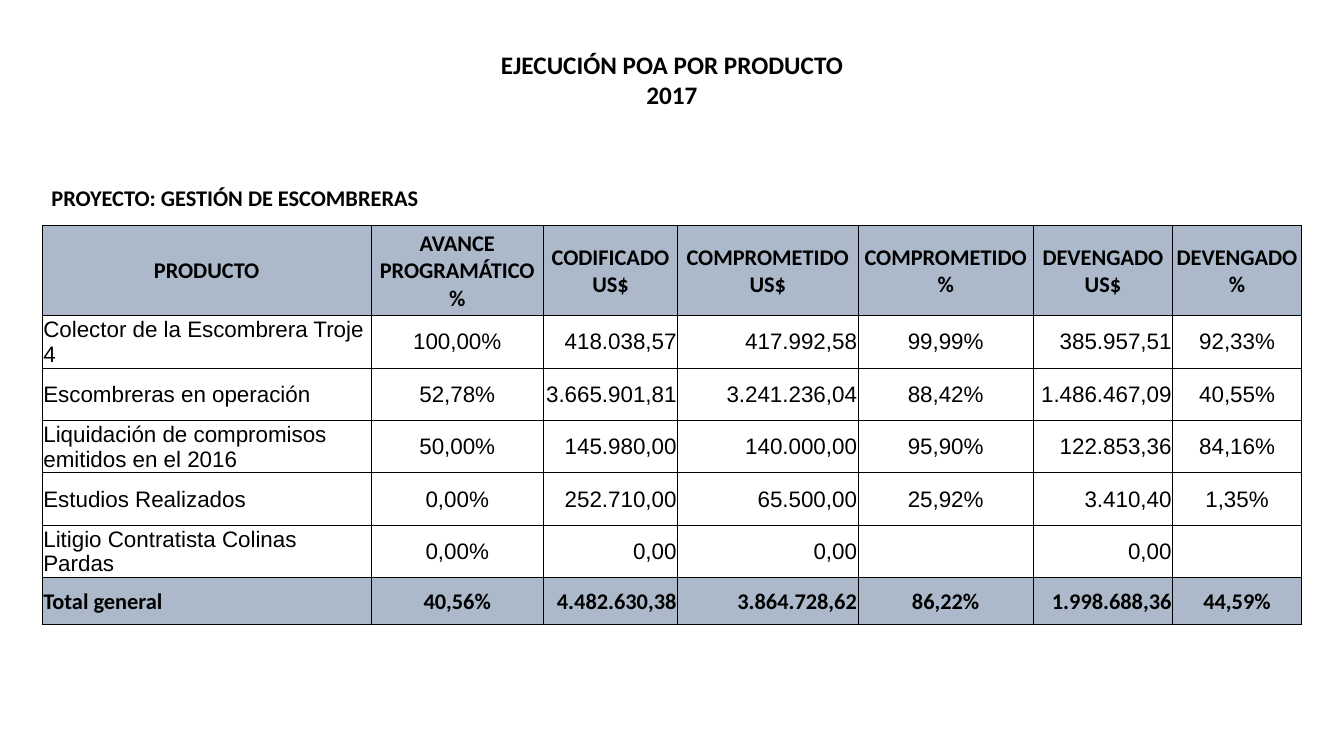
"""Build the 2017 budget execution slide for the rubble dump project."""
from typing import NamedTuple

from lxml.etree import SubElement
from pptx import Presentation
from pptx.dml.color import RGBColor
from pptx.enum.text import MSO_ANCHOR, PP_ALIGN
from pptx.oxml.ns import qn
from pptx.util import Inches, Pt

BLACK, BLUE = "000000", "ACB9CA"
LEFT, CENTER, RIGHT = PP_ALIGN.LEFT, PP_ALIGN.CENTER, PP_ALIGN.RIGHT


class Column(NamedTuple):
    head: str
    width: float
    align: PP_ALIGN


class Row(NamedTuple):
    texts: tuple[str, ...]
    height: float
    strong: bool = False


class Style(NamedTuple):
    font: str = "Calibri"
    size: int = 16
    bold: bool = True


COLUMNS = (
    Column("PRODUCTO", 3.26, LEFT),
    Column("AVANCE PROGRAMÁTICO %", 1.71, CENTER),
    Column("CODIFICADO US$", 1.33, RIGHT),
    Column("COMPROMETIDO US$", 1.79, RIGHT),
    Column("COMPROMETIDO %", 1.74, CENTER),
    Column("DEVENGADO US$", 1.38, RIGHT),
    Column("DEVENGADO %", 1.28, CENTER),
)
PRODUCTS = (
    ("Colector de la Escombrera Troje 4", "100,00%", "418.038,57", "417.992,58",
     "99,99%", "385.957,51", "92,33%"),
    ("Escombreras en operación", "52,78%", "3.665.901,81", "3.241.236,04",
     "88,42%", "1.486.467,09", "40,55%"),
    ("Liquidación de compromisos emitidos en el 2016", "50,00%", "145.980,00",
     "140.000,00", "95,90%", "122.853,36", "84,16%"),
    ("Estudios Realizados", "0,00%", "252.710,00", "65.500,00",
     "25,92%", "3.410,40", "1,35%"),
    ("Litigio Contratista Colinas Pardas", "0,00%", "0,00", "0,00", "", "0,00", ""),
)
TOTAL = ("Total general", "40,56%", "4.482.630,38", "3.864.728,62",
         "86,22%", "1.998.688,36", "44,59%")
ROWS = (
    Row(tuple(col.head for col in COLUMNS), 0.89, True),
    *(Row(texts, 0.52) for texts in PRODUCTS),
    Row(TOTAL, 0.47, True),
)


def color(code: str) -> RGBColor:
    """Turn a hex string into a colour."""
    return RGBColor.from_string(code)


def apply(target, values: dict) -> None:
    """Set each named attribute on the target."""
    for name, value in values.items():
        setattr(target, name, value)


def write(frame, lines: tuple[str, ...], align: PP_ALIGN, style: Style) -> None:
    """Fill a text frame with one paragraph per line."""
    for i, line in enumerate(lines):
        para = frame.add_paragraph() if i else frame.paragraphs[0]
        para.alignment = align
        run = para.add_run()
        run.text = line
        apply(run.font, {"name": style.font, "size": Pt(style.size), "bold": style.bold})
        run.font.color.rgb = color(BLACK)


def place(shape, left: float, top: float, width: float, height: float) -> None:
    """Position a text shape and set its frame."""
    apply(shape, {"left": Inches(left), "top": Inches(top),
                  "width": Inches(width), "height": Inches(height)})
    apply(shape.text_frame, {
        "word_wrap": True, "vertical_anchor": MSO_ANCHOR.MIDDLE,
        "margin_left": Inches(0.09), "margin_right": Inches(0.09),
        "margin_top": Inches(0.04), "margin_bottom": Inches(0.04)})


def border(cell, widths: dict[str, float]) -> None:
    """Draw the sides of a cell with the given point widths."""
    props = cell._tc.get_or_add_tcPr()
    for side, width in widths.items():
        line = SubElement(props, qn(f"a:ln{side}"), w=str(Pt(width)))
        fill = SubElement(line, qn("a:solidFill"))
        SubElement(fill, qn("a:srgbClr"), val=BLACK)


def draw_cell(cell, text: str, align: PP_ALIGN, strong: bool, widths: dict[str, float]) -> None:
    """Format one table cell and write its text."""
    apply(cell, {"vertical_anchor": MSO_ANCHOR.MIDDLE, "margin_left": Inches(0.01),
                 "margin_right": Inches(0.01), "margin_top": Inches(0.01),
                 "margin_bottom": 0})
    border(cell, widths)
    if strong:
        cell.fill.solid()
        cell.fill.fore_color.rgb = color(BLUE)
    else:
        cell.fill.background()
    if text:
        style = Style() if strong else Style("Arial", bold=False)
        write(cell.text_frame, (text,), align, style)


def draw_table(slide) -> None:
    """Add the product table with thicker outer borders."""
    width = sum(col.width for col in COLUMNS)
    height = sum(row.height for row in ROWS)
    table = slide.shapes.add_table(len(ROWS), len(COLUMNS), Inches(0.42), Inches(2.24),
                                   Inches(width), Inches(height)).table
    apply(table, {"first_row": False, "horz_banding": False})
    for c, col in enumerate(COLUMNS):
        table.columns[c].width = Inches(col.width)
    for r, row in enumerate(ROWS):
        table.rows[r].height = Inches(row.height)
        for c, (col, text) in enumerate(zip(COLUMNS, row.texts)):
            outer = {"L": c == 0, "R": c == len(COLUMNS) - 1,
                     "T": r == 0, "B": r == len(ROWS) - 1}
            widths = {side: 1 if edge else 0.5 for side, edge in outer.items()}
            align = col.align if r else CENTER
            draw_cell(table.cell(r, c), text, align, row.strong, widths)


def main() -> None:
    """Build and save the slide."""
    deck = Presentation()
    apply(deck, {"slide_width": Inches(13.33), "slide_height": Inches(7.5)})
    slide = deck.slides.add_slide(deck.slide_layouts[5])
    title = slide.shapes.title
    place(title, 0.42, 1.58, 4.57, 0.77)
    write(title.text_frame, ("PROYECTO: GESTIÓN DE ESCOMBRERAS",), LEFT, Style())
    draw_table(slide)
    banner = slide.shapes.add_textbox(0, 0, 0, 0)
    place(banner, 0.42, 0.4, 12.49, 0.77)
    write(banner.text_frame, ("EJECUCIÓN POA POR PRODUCTO", "2017"), CENTER, Style(size=18))
    deck.save("out.pptx")


if __name__ == "__main__":
    main()
